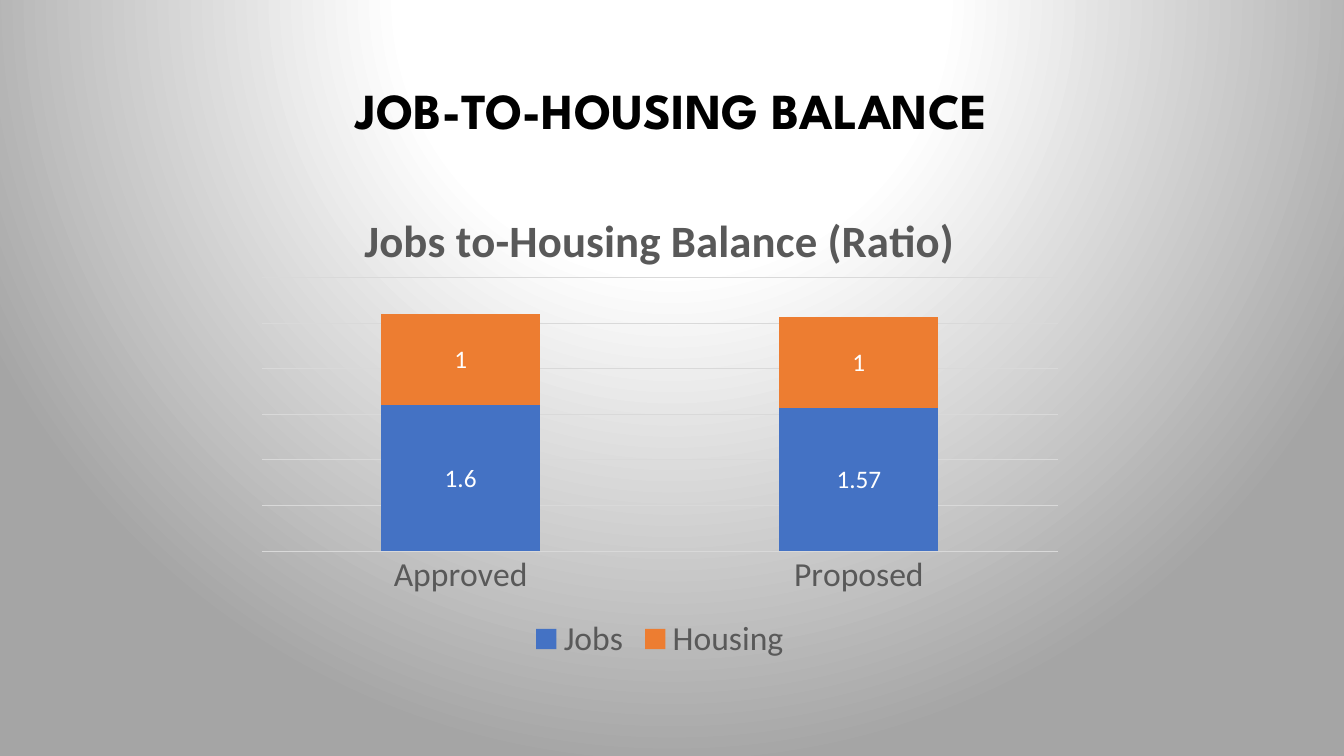
from pptx import Presentation
from pptx.chart.data import CategoryChartData
from pptx.dml.color import RGBColor
from pptx.enum.chart import XL_CHART_TYPE, XL_LABEL_POSITION, XL_LEGEND_POSITION, XL_TICK_MARK
from pptx.enum.text import MSO_ANCHOR, PP_ALIGN
from pptx.oxml import parse_xml
from pptx.oxml.ns import nsdecls
from pptx.util import Pt

STACKED = XL_CHART_TYPE.COLUMN_STACKED
CENTER_LABEL = XL_LABEL_POSITION.CENTER
BOTTOM = XL_LEGEND_POSITION.BOTTOM
NO_TICK = XL_TICK_MARK.NONE
MIDDLE = MSO_ANCHOR.MIDDLE
CENTER = PP_ALIGN.CENTER

COLORS = {
    "white": "FFFFFF",
    "edge": "A5A5A5",
    "black": "000000",
    "text": "595959",
    "grid": "D9D9D9",
    "Jobs": "4472C4",
    "Housing": "ED7D31",
}


def style_font(font, size, color, name="Calibri", bold=False):
    font.size = Pt(size)
    font.name = name
    font.bold = bold
    font.color.rgb = RGBColor.from_string(COLORS[color])


def style_line(line):
    line.width = Pt(0.75)
    line.color.rgb = RGBColor.from_string(COLORS["grid"])


presentation = Presentation()
presentation.slide_width = Pt(960)
presentation.slide_height = Pt(540)
slide = presentation.slides.add_slide(presentation.slide_layouts[5])

# Radial background, centred above the slide
slide.background.fill.solid()
solid_fill = slide.element.xpath(".//p:bgPr/a:solidFill")[0]
stops = "".join(
    f'<a:gs pos="{position * 1000}"><a:srgbClr val="{COLORS[color]}"/></a:gs>'
    for position, color in [(0, "white"), (35, "white"), (100, "edge")]
)
gradient = parse_xml(
    f'<a:gradFill {nsdecls("a")} rotWithShape="1"><a:gsLst>{stops}</a:gsLst>'
    '<a:path path="circle"><a:fillToRect l="50000" t="-80000" r="50000" b="180000"/></a:path>'
    "</a:gradFill>"
)
solid_fill.getparent().replace(solid_fill, gradient)

# Slide title
title = slide.shapes.title
title.left, title.top, title.width, title.height = Pt(66), Pt(28.75), Pt(828), Pt(104.4)
title.text_frame.vertical_anchor = MIDDLE
title.text_frame.word_wrap = True
paragraph = title.text_frame.paragraphs[0]
paragraph.alignment = CENTER
paragraph.line_spacing = 0.9
run = paragraph.add_run()
run.text = "JOB-TO-HOUSING BALANCE"
style_font(run.font, 36, "black", "League Spartan", True)

# Stacked column chart
chart_data = CategoryChartData()
chart_data.categories = ["Approved", "Proposed"]
chart_data.add_series("Jobs", [1.6, 1.57])
chart_data.add_series("Housing", [1, 1])
chart = slide.shapes.add_chart(STACKED, Pt(175), Pt(133.2), Pt(592.6), Pt(342.7), chart_data).chart
style_font(chart.font, 10, "black")

chart.has_title = True
run = chart.chart_title.text_frame.paragraphs[0].add_run()
run.text = "Jobs to-Housing Balance (Ratio)"
style_font(run.font, 32, "text", bold=True)
chart.chart_title.include_in_layout = False

chart.has_legend = True
chart.legend.position = BOTTOM
chart.legend.include_in_layout = False
style_font(chart.legend.font, 24, "text")

category_axis = chart.category_axis
category_axis.major_tick_mark = NO_TICK
category_axis.minor_tick_mark = NO_TICK
style_font(category_axis.tick_labels.font, 24, "text")
style_line(category_axis.format.line)

value_axis = chart.value_axis
value_axis.visible = False
value_axis.minimum_scale = 0
value_axis.maximum_scale = 3
value_axis.major_unit = 0.5
value_axis.has_major_gridlines = True
style_line(value_axis.major_gridlines.format.line)

plot = chart.plots[0]
plot.gap_width = 150
plot.overlap = 100
plot.vary_by_categories = False
for series in plot.series:
    series.format.fill.solid()
    series.format.fill.fore_color.rgb = RGBColor.from_string(COLORS[series.name])
    labels = series.data_labels
    labels.show_value = True
    labels.position = CENTER_LABEL
    style_font(labels.font, 18, "white")

# Fixed inner plot area, as fractions of the chart
plot_area = chart.element.xpath(".//c:plotArea")[0]
for layout in plot_area.xpath("./c:layout"):
    plot_area.remove(layout)
bounds = "".join(
    f'<c:{key} val="{value}"/>' for key, value in [("x", 0.02), ("y", 0.19), ("w", 0.96), ("h", 0.57)]
)
plot_area.insert(0, parse_xml(
    f'<c:layout {nsdecls("c")}><c:manualLayout><c:layoutTarget val="inner"/>'
    f'<c:xMode val="edge"/><c:yMode val="edge"/>{bounds}</c:manualLayout></c:layout>'
))

presentation.save("out.pptx")
